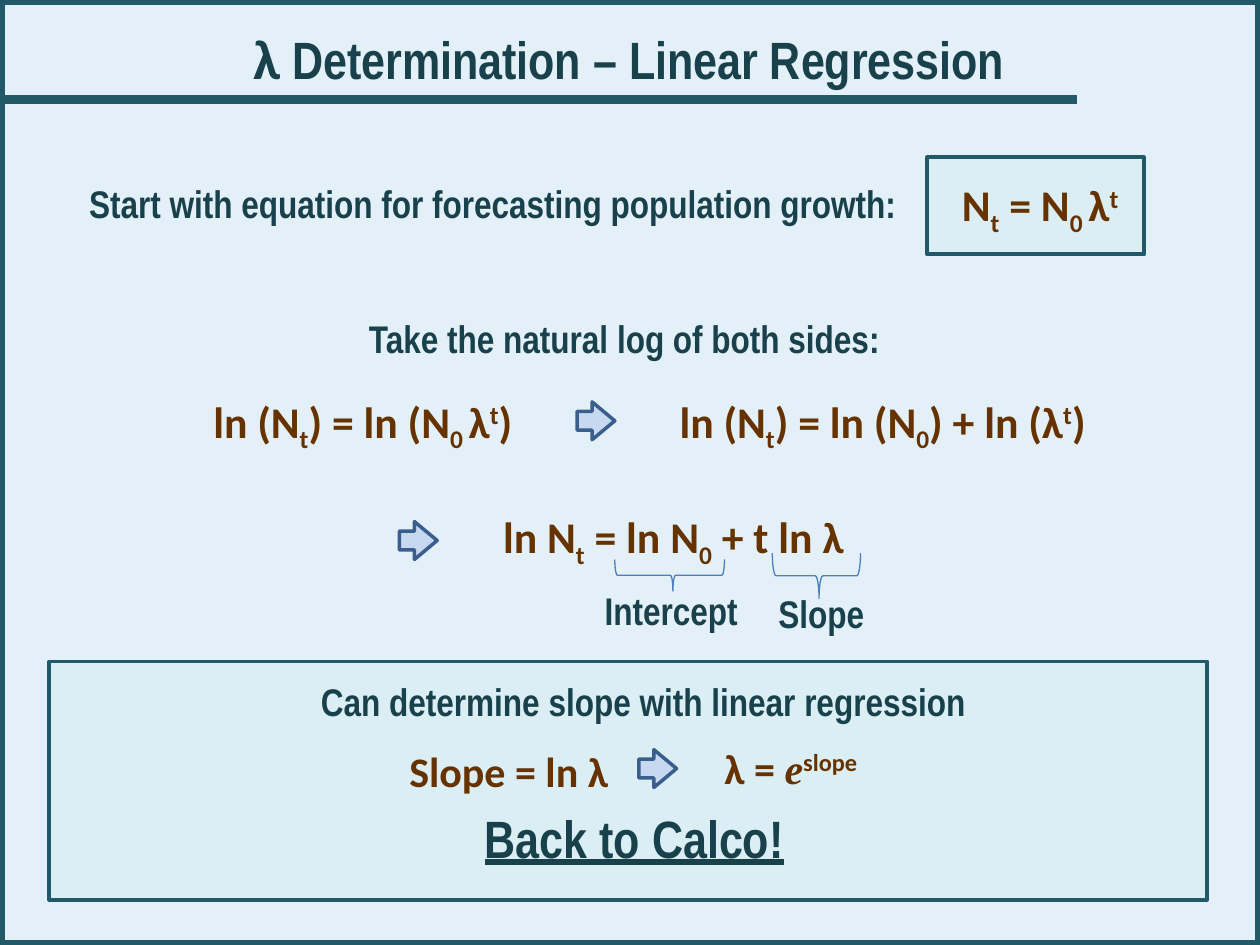
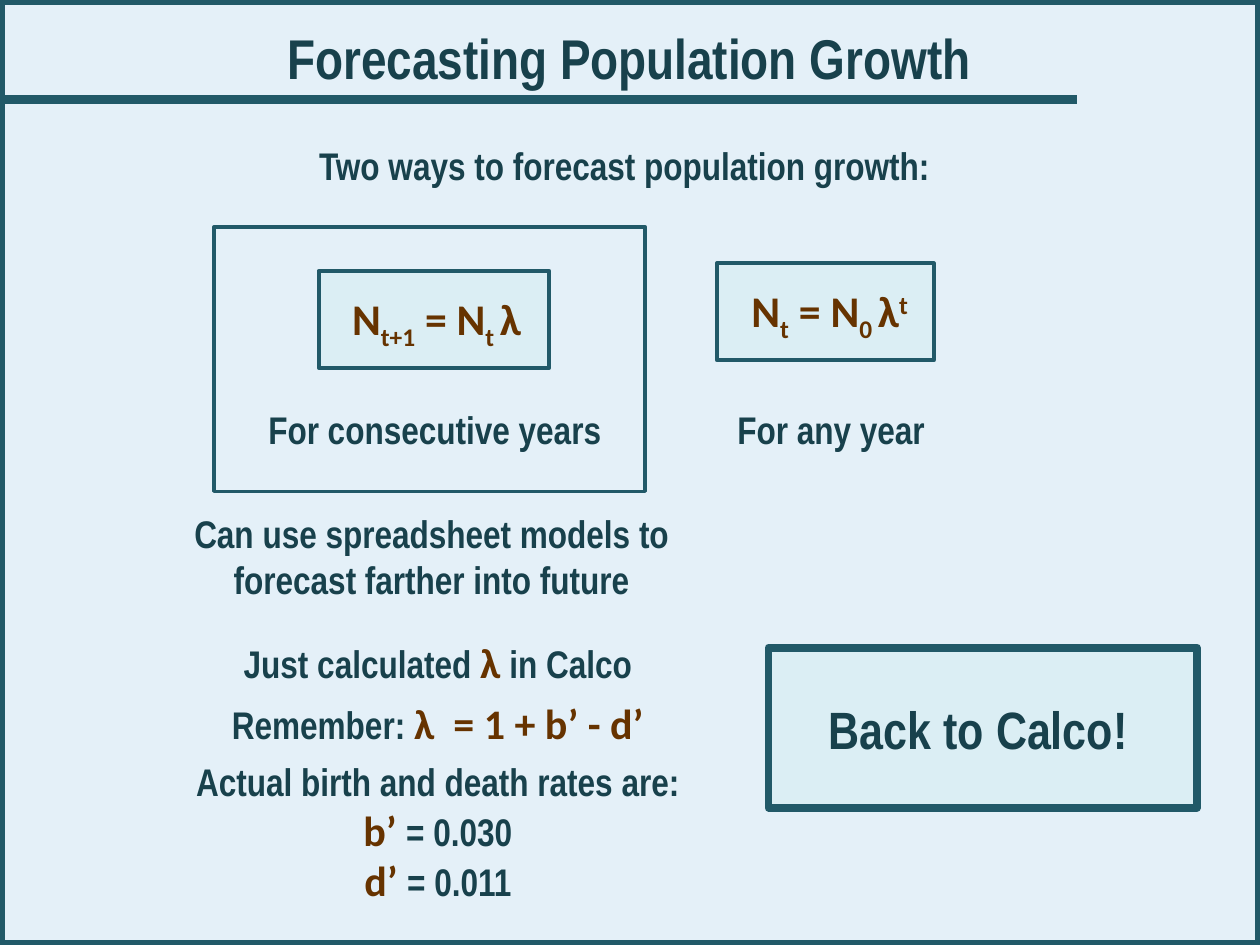
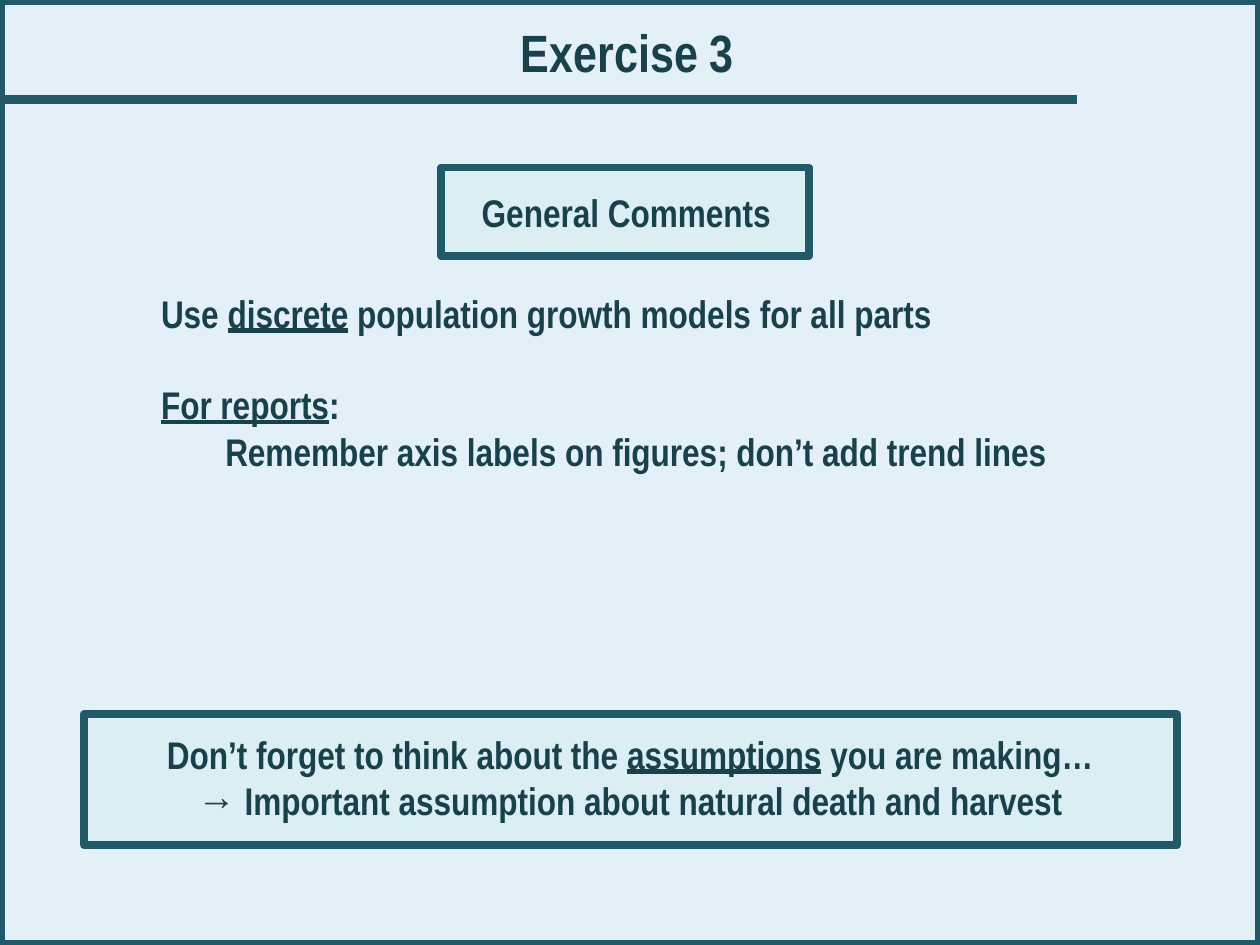
from dataclasses import dataclass

from pptx import Presentation
from pptx.dml.color import RGBColor
from pptx.enum.shapes import MSO_CONNECTOR, MSO_SHAPE
from pptx.enum.text import MSO_AUTO_SIZE, PP_ALIGN
from pptx.oxml.ns import qn
from pptx.util import Inches, Pt

RECTANGLE = MSO_SHAPE.RECTANGLE
ARROW = MSO_SHAPE.RIGHT_ARROW
BRACE = MSO_SHAPE.LEFT_BRACE
STRAIGHT = MSO_CONNECTOR.STRAIGHT
FIT_SHAPE = MSO_AUTO_SIZE.SHAPE_TO_FIT_TEXT
LEFT, CENTER = PP_ALIGN.LEFT, PP_ALIGN.CENTER

# The slide is a grid of 10 columns by 7.5 rows, one inch each
COLUMNS, ROWS = 10, 7.5
CELL = Inches(1)


@dataclass(frozen=True)
class Theme:
    background: str = "E4F0F8"
    border: str = "215968"
    panel: str = "DBEEF4"
    prose: str = "18414C"
    formula: str = "663300"
    arrow: str = "C6D9F1"
    arrow_edge: str = "3A5F8C"
    brace: str = "4B7EBC"
    prose_font: str = "Arial Narrow"
    formula_font: str = "Calibri"
    exponent_font: str = "Times New Roman"
    title_size: float = 32
    heading_size: float = 30
    body_size: float = 22
    symbol_size: float = 24
    equation_size: float = 25
    thin: float = 2
    medium: float = 2.25
    thick: float = 4.5


THEME = Theme()


@dataclass(frozen=True)
class Span:
    text: str
    size: float
    font: str
    color: str
    shift: int = 0
    underline: bool = False
    italic: bool = False


@dataclass(frozen=True)
class Line:
    spans: tuple
    before: float = 0
    indent: float = 0


# Kinds of wording
def prose(text, size=THEME.body_size, underline=False):
    return Span(text, size, THEME.prose_font, THEME.prose, underline=underline)


def symbol(text, size=THEME.symbol_size, shift=0):
    return Span(text, size, THEME.formula_font, THEME.formula, shift)


def equation(*parts):
    """Text parts stand on the baseline; (text, shift) parts are raised or lowered."""
    pairs = (part if isinstance(part, tuple) else (part, 0) for part in parts)
    return Line(tuple(symbol(text, THEME.equation_size, shift) for text, shift in pairs))


def sub(text):
    return text, -25000


def sup(text):
    return text, 30000


FORECAST = equation("N", sub("t"), " = N", sub("0 "), "λ", sup("t"))


# Kinds of element
def rgb(color):
    return RGBColor.from_string(color)


def place(area):
    return [round(length * CELL) for length in area]


def draw(slide, kind, area, edge, weight, fill=None):
    shape = slide.shapes.add_shape(kind, *place(area))
    shape.shadow.inherit = False
    if fill:
        shape.fill.solid()
        shape.fill.fore_color.rgb = rgb(fill)
    else:
        shape.fill.background()
    shape.line.color.rgb = rgb(edge)
    shape.line.width = Pt(weight)
    return shape


def add_panel(slide, area, weight=THEME.medium, fill=THEME.panel):
    return draw(slide, RECTANGLE, area, THEME.border, weight, fill)


def add_arrow(slide, left, top):
    arrow = draw(slide, ARROW, (left, top, 0.3, 0.3), THEME.arrow_edge, THEME.thin, THEME.arrow)
    arrow.adjustments[1] = 0.6


def add_brace(slide, left, top, width, depth):
    """Brace that opens upwards over the given area."""
    turned = (left + (width - depth) / 2, top + (depth - width) / 2, depth, width)
    brace = draw(slide, BRACE, turned, THEME.brace, 0.75)
    brace.rotation = 270
    brace.adjustments[1] = 0.53


def add_text(slide, area, *lines, align=CENTER):
    box = slide.shapes.add_textbox(*place(area))
    frame = box.text_frame
    frame.word_wrap = True
    frame.auto_size = FIT_SHAPE
    for index, line in enumerate(lines):
        paragraph = frame.add_paragraph() if index else frame.paragraphs[0]
        paragraph.alignment = align
        if line.before:
            paragraph.space_before = Pt(line.before)
        if line.indent:
            paragraph._p.get_or_add_pPr().set("marL", str(round(line.indent * CELL)))
        for span in line.spans:
            add_span(paragraph, span)
    return box


def add_span(paragraph, span):
    run = paragraph.add_run()
    run.text = span.text
    font = run.font
    font.name, font.size, font.bold = span.font, Pt(span.size), True
    font.color.rgb = rgb(span.color)
    if span.underline:
        font.underline = True
    if span.italic:
        font.italic = True
    if span.shift:
        run._r.get_or_add_rPr().set("baseline", str(span.shift))


def add_prose(slide, area, text, align=CENTER, size=THEME.body_size, underline=False):
    return add_text(slide, area, Line((prose(text, size, underline),)), align=align)


def add_forecast(slide, left, top):
    add_panel(slide, (left, top, 1.72, 0.77))
    add_text(slide, (left + 0.07, top + 0.11, 1.65, 0.52), FORECAST)


def start_slide(deck):
    """Blank slide with the shared border and title rule."""
    slide = deck.slides.add_slide(deck.slide_layouts[6])
    add_panel(slide, (0, 0, COLUMNS, ROWS), 6, None)
    rule = slide.shapes.add_connector(STRAIGHT, *place((0.01, 0.79, 8.55, 0.79)))
    rule.line.color.rgb = rgb(THEME.border)
    rule.line.width = Pt(5)
    properties = rule._element.spPr
    properties.append(properties.makeelement(qn("a:effectLst"), {}))
    return slide


# Slides
def build_regression(deck):
    slide = start_slide(deck)
    title = (prose(" ", THEME.title_size),
             Span("λ", THEME.title_size, THEME.formula_font, THEME.prose),
             prose(" ", 28),
             prose("Determination – Linear Regression", THEME.heading_size))
    add_text(slide, (1.47, 0.14, 6.95, 0.64), Line(title))

    # Starting equation
    add_prose(slide, (0.61, 1.38, 6.83, 0.47),
              "Start with equation for forecasting population growth:", LEFT)
    add_forecast(slide, 7.36, 1.25)

    # Logarithms
    add_prose(slide, (2.83, 2.45, 4.5, 0.47), "Take the natural log of both sides:", LEFT)
    add_text(slide, (1.25, 3.08, 3.26, 0.52),
             equation("ln (N", sub("t"), ") = ln (N", sub("0 "), "λ", sup("t"), ")"))
    add_arrow(slide, 4.58, 3.19)
    add_text(slide, (4.92, 3.08, 4.17, 0.52),
             equation("ln (N", sub("t"), ") = ln (N", sub("0"), ") + ln (λ", sup("t"), ")"))
    add_arrow(slide, 3.17, 4.14)
    add_text(slide, (3.26, 4, 4.17, 0.52),
             equation("ln N", sub("t"), " = ln N", sub("0"), " + t ln λ"))

    # Parts of the line
    add_brace(slide, 6.13, 4.39, 0.7, 0.36)
    add_brace(slide, 4.88, 4.44, 0.87, 0.25)
    add_prose(slide, (4.7, 4.61, 1.28, 0.47), "Intercept", LEFT)
    add_prose(slide, (6.08, 4.63, 1.03, 0.47), "Slope", LEFT)

    # Conclusion
    add_panel(slide, (0.39, 5.25, 9.19, 1.89))
    add_prose(slide, (2.17, 5.33, 5.87, 0.47), "Can determine slope with linear regression")
    add_text(slide, (3.15, 5.87, 1.86, 0.5), Line((symbol("Slope = ln λ"),)), align=LEFT)
    add_arrow(slide, 5.07, 5.95)
    base = Span("e", THEME.symbol_size, THEME.exponent_font, THEME.formula, italic=True)
    exponent = symbol("slope", shift=30000)
    add_text(slide, (5.65, 5.84, 1.93, 0.5), Line((symbol("λ = "), base, exponent)), align=LEFT)
    add_prose(slide, (2.99, 6.35, 4.09, 0.61), "Back to Calco!",
              size=THEME.heading_size, underline=True)


def build_forecasting(deck):
    slide = start_slide(deck)
    add_prose(slide, (1.47, 0.14, 6.95, 0.64), " Forecasting Population Growth",
              size=THEME.title_size)
    add_prose(slide, (2.33, 1.08, 5.25, 0.49), "Two ways to forecast population growth:")

    # Two equations
    add_panel(slide, (2.53, 2.15, 1.83, 0.77))
    add_text(slide, (2.59, 2.27, 1.75, 0.52),
             equation("N", sub("t+1"), " = N", sub("t "), "λ"))
    add_forecast(slide, 5.69, 2.09)
    add_prose(slide, (1.62, 3.17, 3.66, 0.49), "For consecutive years")
    add_prose(slide, (5.35, 3.17, 2.49, 0.49), "For any year")
    add_panel(slide, (1.7, 1.8, 3.42, 2.1), THEME.thin, None)

    # Worked values
    add_prose(slide, (0.94, 4, 4.97, 0.84),
              "Can use spreadsheet models to forecast farther into future")
    add_text(slide, (1.04, 5, 4.87, 2.26),
             Line((prose("Just calculated "), symbol("λ"), prose(" in Calco"))),
             Line((prose("Remember: "), symbol("λ  = 1 + b’ - d’")), before=6),
             Line((prose("Actual birth and death rates are:"),), before=6),
             *(Line((symbol(f"{rate}’ "), prose(f"= {value}")))
               for rate, value in (("b", "0.030"), ("d", "0.011"))))

    # Call to action
    panel = add_panel(slide, (6.1, 5.14, 3.4, 1.27), THEME.thick)
    call = add_prose(slide, (6.28, 5.48, 2.97, 0.61), "Back to Calco!",
                     size=THEME.heading_size)
    slide.shapes.add_group_shape([panel, call])


def build_exercise(deck):
    slide = start_slide(deck)
    add_prose(slide, (1.22, 0.11, 7.52, 0.61), "Exercise 3", size=THEME.heading_size)

    # Comments
    add_panel(slide, (3.5, 1.33, 2.92, 0.7), THEME.thick)
    add_prose(slide, (3.54, 1.45, 2.86, 0.47), "General Comments")
    add_text(slide, (1.18, 2.25, 7.9, 1.58),
             Line((prose("Use "), prose("discrete", underline=True),
                   prose(" population growth models for all parts"))),
             Line((prose("For reports", underline=True), prose(":")), before=26),
             Line((prose("Remember axis labels on figures; don’t add trend lines"),),
                  indent=0.51),
             align=LEFT)

    # Reminder
    add_panel(slide, (0.67, 5.67, 8.67, 1.04), THEME.thick)
    add_text(slide, (0.75, 5.75, 8.5, 0.84),
             Line((prose("Don’t forget to think about the "),
                   prose("assumptions", underline=True),
                   prose(" you are making…"))),
             Line((prose("→ Important assumption about natural death and harvest"),)))


def main():
    deck = Presentation()
    deck.slide_width, deck.slide_height = place((COLUMNS, ROWS))
    backdrop = deck.slide_master.background.fill
    backdrop.solid()
    backdrop.fore_color.rgb = rgb(THEME.background)
    for build in (build_regression, build_forecasting, build_exercise):
        build(deck)
    deck.save("out.pptx")


if __name__ == "__main__":
    main()
